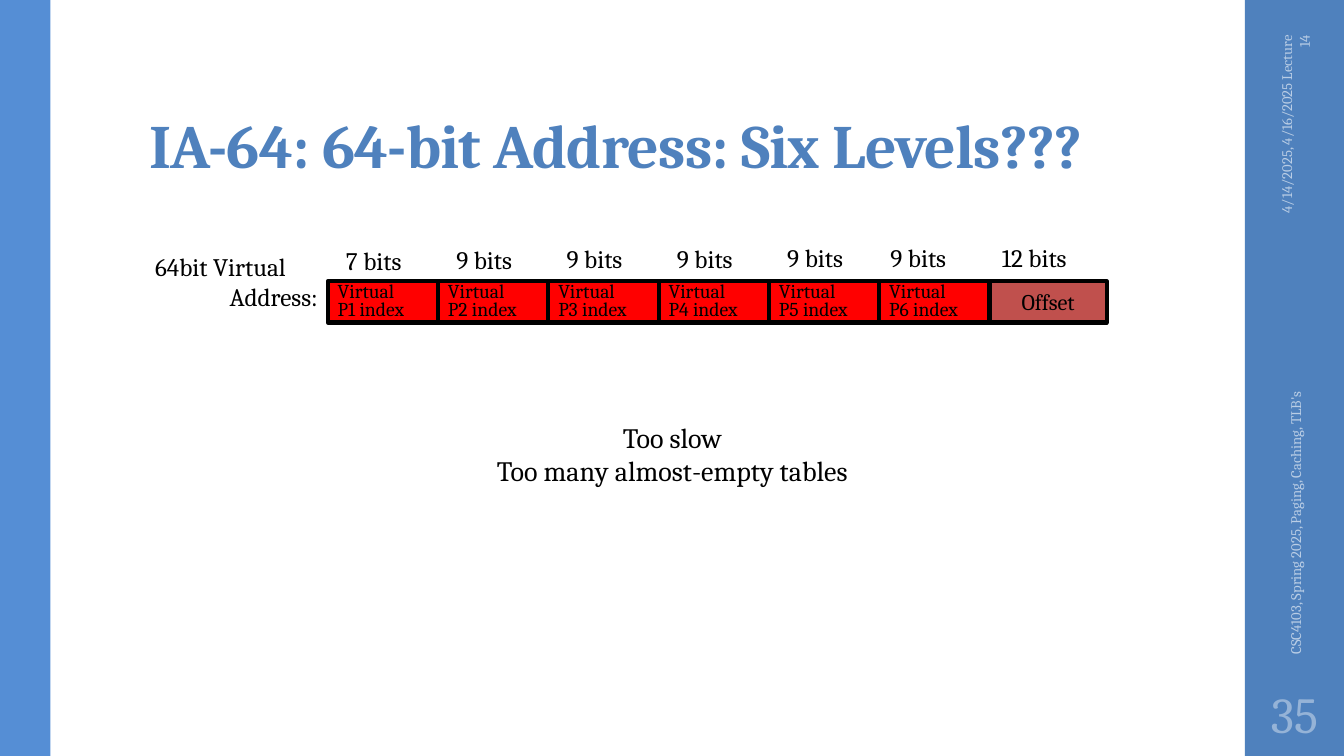
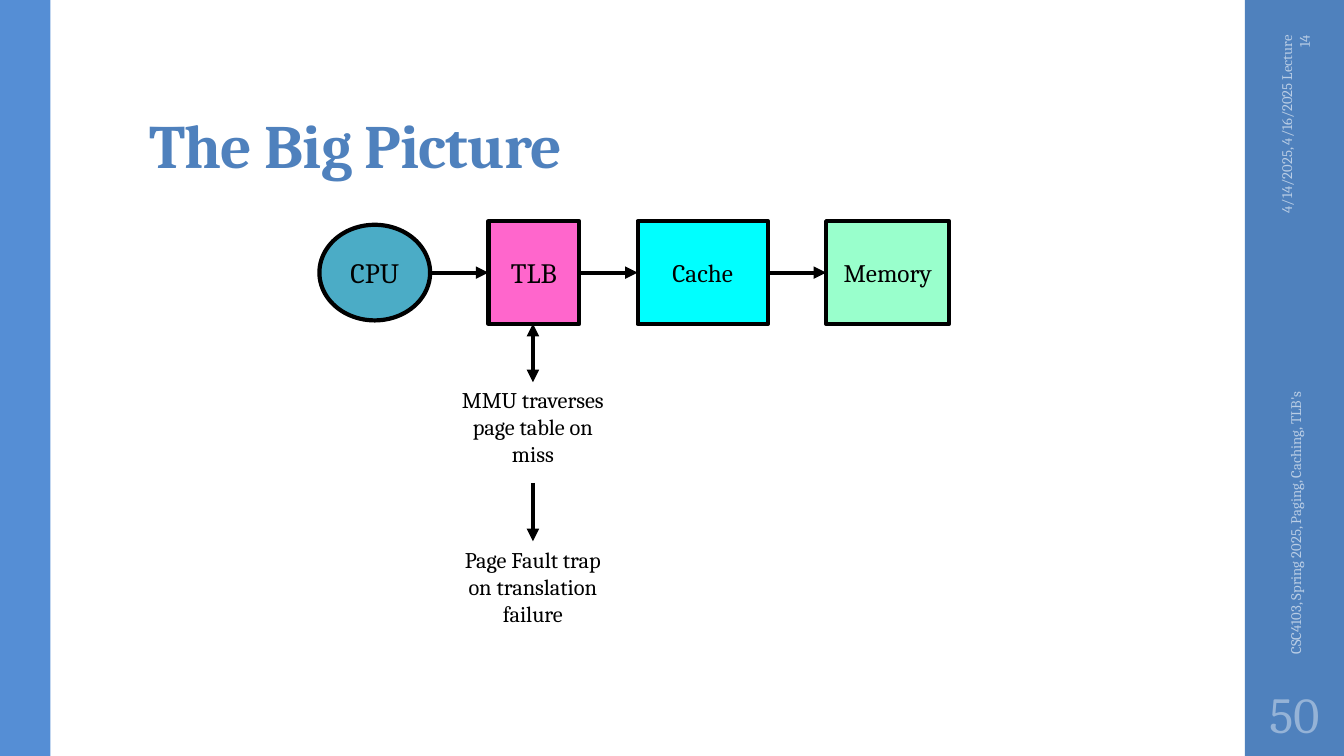
import pptx
import pptx.dml.color
import pptx.enum.shapes
import pptx.enum.text
import pptx.oxml.ns
import pptx.util
from lxml import etree

Cm = pptx.util.Cm
Pt = pptx.util.Pt
RGBColor = pptx.dml.color.RGBColor
SHAPE = pptx.enum.shapes.MSO_SHAPE
ALIGN = pptx.enum.text.PP_ALIGN
ANCHOR = pptx.enum.text.MSO_ANCHOR
qn = pptx.oxml.ns.qn

FONT = "Cambria"
BLACK = RGBColor(0x00, 0x00, 0x00)
BLUE = RGBColor(0x4F, 0x81, 0xBD)
LEFT_BLUE = RGBColor(0x55, 0x8E, 0xD5)
FOOTER_BLUE = RGBColor(0xB9, 0xCD, 0xE5)
NUMBER_BLUE = RGBColor(0x95, 0xB3, 0xD7)
RED = RGBColor(0xFF, 0x00, 0x00)
BRICK = RGBColor(0xC0, 0x50, 0x4D)
TEAL = RGBColor(0x4B, 0xAC, 0xC6)
PINK = RGBColor(0xFF, 0x66, 0xCC)
CYAN = RGBColor(0x00, 0xFF, 0xFF)
MINT = RGBColor(0x99, 0xFF, 0xCC)

SLIDE_W, SLIDE_H = 33.87, 19.05
BAND_X, BAND_W = 31.37, 2.5
DATE = "4/14/2025, 4/16/2025 Lecture 14"
FOOTER = "CSC4103, Spring 2025, Paging, Caching, TLB's"


def write(sp, lines, size, color=BLACK, align=ALIGN.LEFT, anchor=ANCHOR.TOP,
          wrap=True, spacing=None, bold=False, insets=(0.25, 0.13)):
    """Fill a shape with one paragraph per line; insets are (sides, top and bottom)."""
    tf = sp.text_frame
    tf.word_wrap = wrap
    tf.vertical_anchor = anchor
    tf.margin_left = tf.margin_right = Cm(insets[0])
    tf.margin_top = tf.margin_bottom = Cm(insets[1])
    tf.text = "\n".join(lines)
    for p in tf.paragraphs:
        p.alignment = align
        p.font.name = FONT
        p.font.size = Pt(size)
        p.font.bold = bold
        p.font.color.rgb = color
        if spacing:
            p.line_spacing = spacing
    return tf


def add_text(s, x, y, w, h, lines, size, **style):
    sp = s.shapes.add_textbox(Cm(x), Cm(y), Cm(w), Cm(h))
    write(sp, lines, size, **style)
    return sp


def add_block(s, kind, x, y, w, h, fill, outlined=True):
    sp = s.shapes.add_shape(kind, Cm(x), Cm(y), Cm(w), Cm(h))
    sp.shadow.inherit = False
    sp.fill.solid()
    sp.fill.fore_color.rgb = fill
    if outlined:
        sp.line.color.rgb = BLACK
        sp.line.width = Pt(3)
    else:
        sp.line.fill.background()
    return sp


def add_arrow(s, x1, y1, x2, y2, both_ends=False):
    line = s.shapes.add_connector(pptx.enum.shapes.MSO_CONNECTOR.STRAIGHT,
                                  Cm(x1), Cm(y1), Cm(x2), Cm(y2))
    line.line.color.rgb = BLACK
    line.line.width = Pt(3)
    ln = line.line._get_or_add_ln()
    for end in ("headEnd", "tailEnd") if both_ends else ("tailEnd",):
        etree.SubElement(ln, qn("a:" + end), type="triangle")
    etree.SubElement(line._element.spPr, qn("a:effectLst"))


def add_upright(s, center_y, length, text, align):
    """Add small text that reads upwards in the right band."""
    height = 1.02
    sp = add_text(s, 32.64 - length / 2, center_y - height / 2, length, height,
                  [text], 10.5, color=FOOTER_BLUE, align=align, anchor=ANCHOR.MIDDLE)
    sp.rotation = 270


def add_slide(prs, title, number):
    """Add a slide with the bands, title, footers and slide number."""
    s = prs.slides.add_slide(prs.slide_layouts[6])
    add_block(s, SHAPE.RECTANGLE, BAND_X, 0, BAND_W, SLIDE_H, BLUE, outlined=False)
    add_block(s, SHAPE.RECTANGLE, 0, 0, 1.27, SLIDE_H, LEFT_BLUE, outlined=False)
    sp = add_text(s, 3.51, 0.81, 26.92, 3.89, [title], 44, color=BLUE, bold=True,
                  anchor=ANCHOR.BOTTOM, spacing=0.9)
    p = sp.text_frame.paragraphs[0]
    p.runs[0]._r.get_or_add_rPr().set("spc", "-50")
    add_upright(s, 3.28, 5.28, DATE, ALIGN.RIGHT)
    add_upright(s, 11.76, 9.96, FOOTER, ALIGN.LEFT)
    add_text(s, BAND_X, 17.14, BAND_W, 1.65, [str(number)], 36, color=NUMBER_BLUE,
             align=ALIGN.CENTER, anchor=ANCHOR.MIDDLE, insets=(0.13, 0.13))
    return s


def add_address_fields(s):
    left, top, width, height = 8.26, 7.09, 2.78, 1.04
    # bits, indent of the label from its field, top of the label
    labels = [(7, 0.28, 6.2), (9, 0.28, 6.17), (9, 0.28, 6.15), (9, 0.28, 6.15),
              (9, 0.28, 6.1), (9, 0.1, 6.1), (12, 0.13, 6.1)]
    for i, (bits, indent, label_top) in enumerate(labels):
        x = left + i * width
        add_text(s, x + indent, label_top, 2.36, 0.84, [f"{bits} bits"], 18,
                 spacing=0.9, insets=(0.18, 0.08))
        if i < 6:
            sp = add_block(s, SHAPE.RECTANGLE, x, top, width, height, RED)
            write(sp, ["Virtual", f"P{i + 1} index"], 14, anchor=ANCHOR.MIDDLE,
                  wrap=False, spacing=0.75)
        else:
            sp = add_block(s, SHAPE.RECTANGLE, x, top, 2.95, height, BRICK)
            write(sp, ["Offset"], 16, align=ALIGN.CENTER, anchor=ANCHOR.MIDDLE,
                  wrap=False)


def build_six_levels(prs):
    s = add_slide(prs, "IA-64: 64-bit Address: Six Levels???", 35)
    sp = add_text(s, 3.66, 6.2, 4.6, 1.78, ["64bit Virtual", "Address:"], 18)
    sp.text_frame.paragraphs[1].alignment = ALIGN.RIGHT
    add_address_fields(s)
    add_text(s, 11.66, 10.46, 10.57, 1.96,
             ["Too slow", "Too many almost-empty tables"], 20, align=ALIGN.CENTER)


def build_big_picture(prs):
    s = add_slide(prs, "The Big Picture", 50)
    gap, center_y = 1.47, 6.87
    stages = [("CPU", SHAPE.OVAL, 2.79, 2.41, TEAL, 20),
              ("TLB", SHAPE.RECTANGLE, 2.29, 2.59, PINK, 20),
              ("Cache", SHAPE.RECTANGLE, 3.28, 2.59, CYAN, 18),
              ("Memory", SHAPE.RECTANGLE, 3.1, 2.59, MINT, 18)]
    x = 8.05
    for i, (name, kind, w, h, fill, size) in enumerate(stages):
        sp = add_block(s, kind, x, center_y - h / 2, w, h, fill)
        write(sp, [name], size, align=ALIGN.CENTER, anchor=ANCHOR.MIDDLE, wrap=False)
        if i:
            add_arrow(s, x - gap, center_y, x, center_y)
        x += w + gap

    center_x, note_w = 13.43, 4.37
    notes = [("MMU traverses page table on miss", 8.16, 9.6, 2.31, True),
             ("Page Fault trap on translation failure", 12.17, 13.64, 3, False)]
    for text, arrow_top, note_top, h, both_ends in notes:
        add_arrow(s, center_x, arrow_top, center_x, arrow_top + gap, both_ends)
        add_text(s, center_x - note_w / 2, note_top, note_w, h, [text], 16,
                 align=ALIGN.CENTER)


def main():
    prs = pptx.Presentation()
    prs.slide_width = Cm(SLIDE_W)
    prs.slide_height = Cm(SLIDE_H)
    build_six_levels(prs)
    build_big_picture(prs)
    prs.save("out.pptx")


if __name__ == "__main__":
    main()
